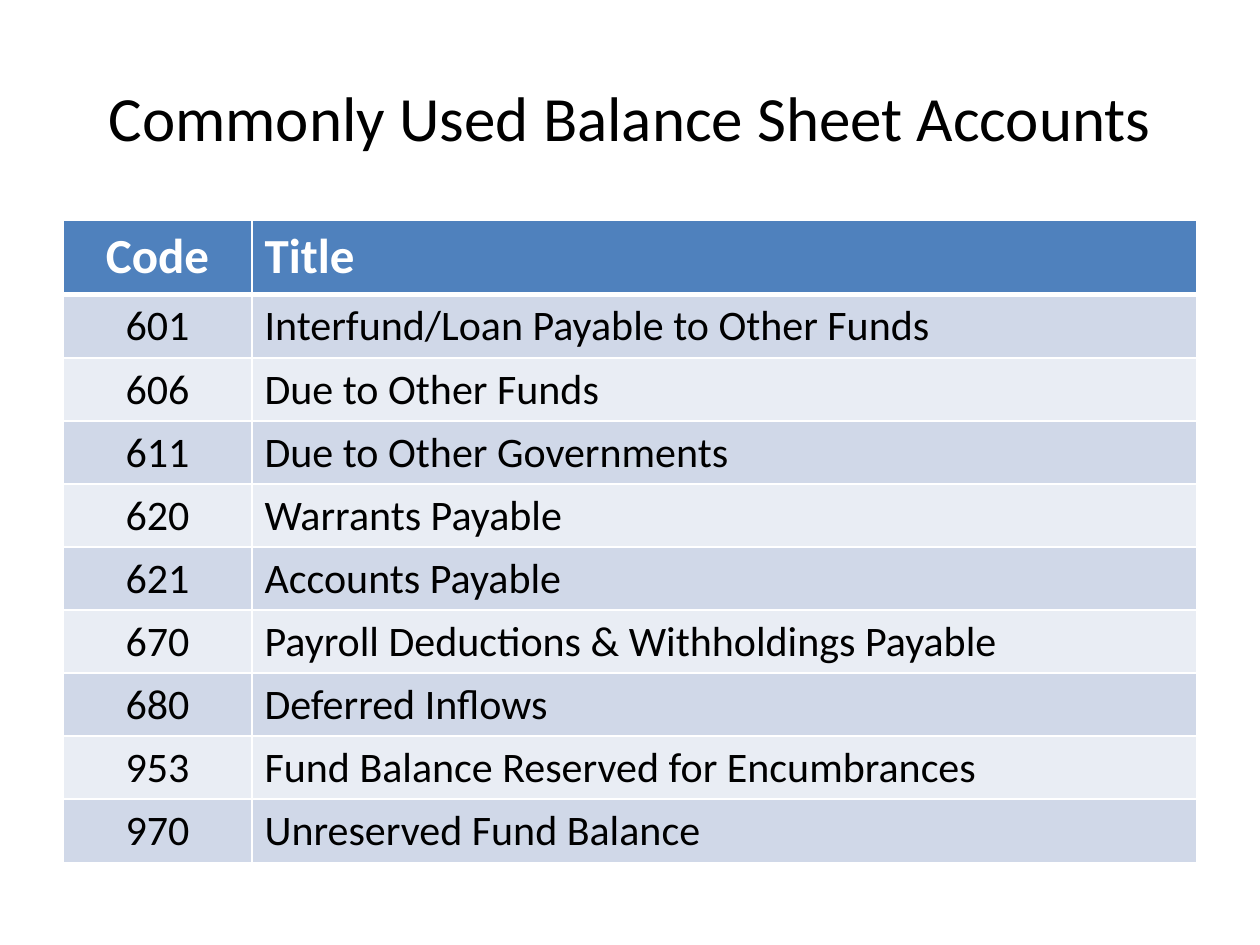
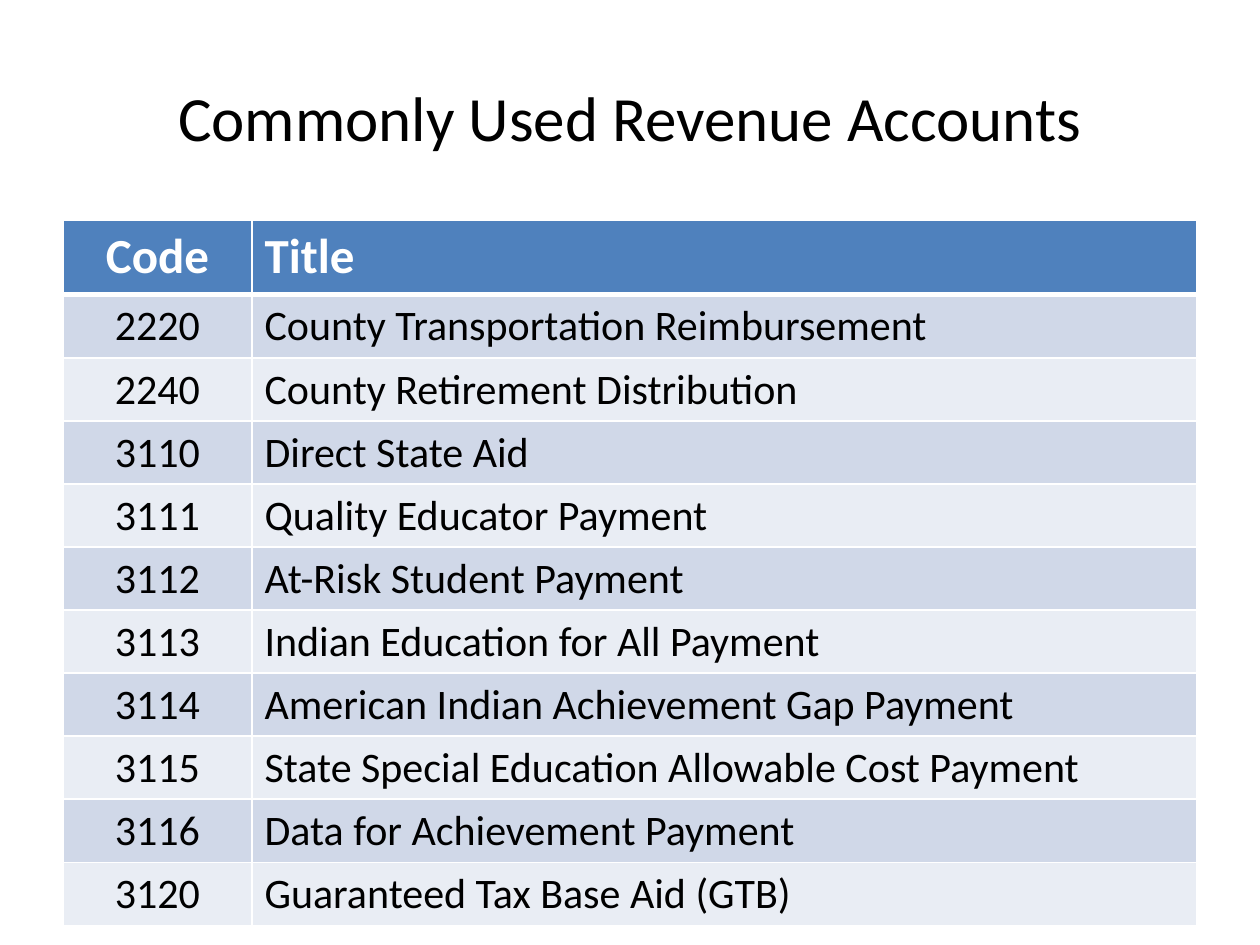
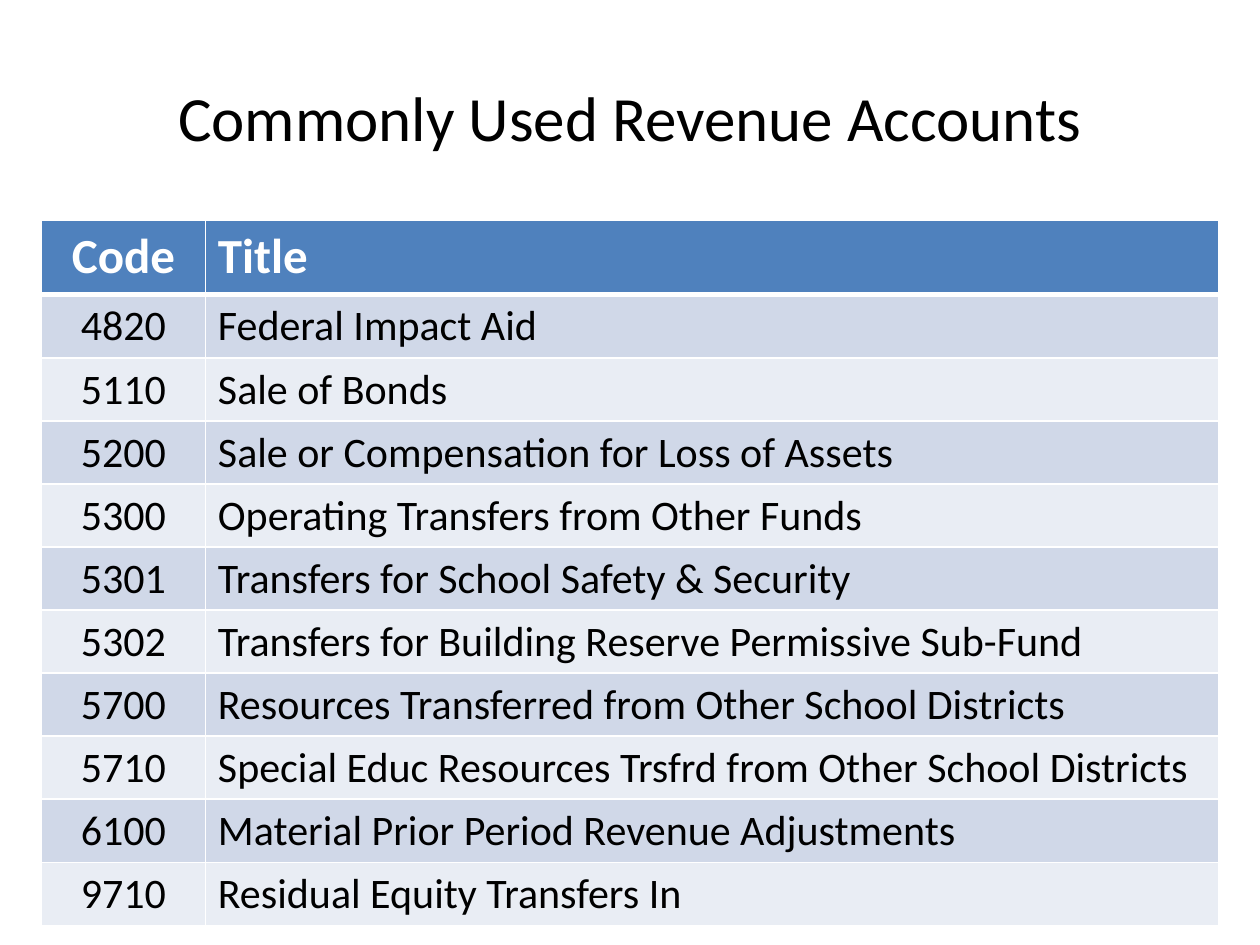
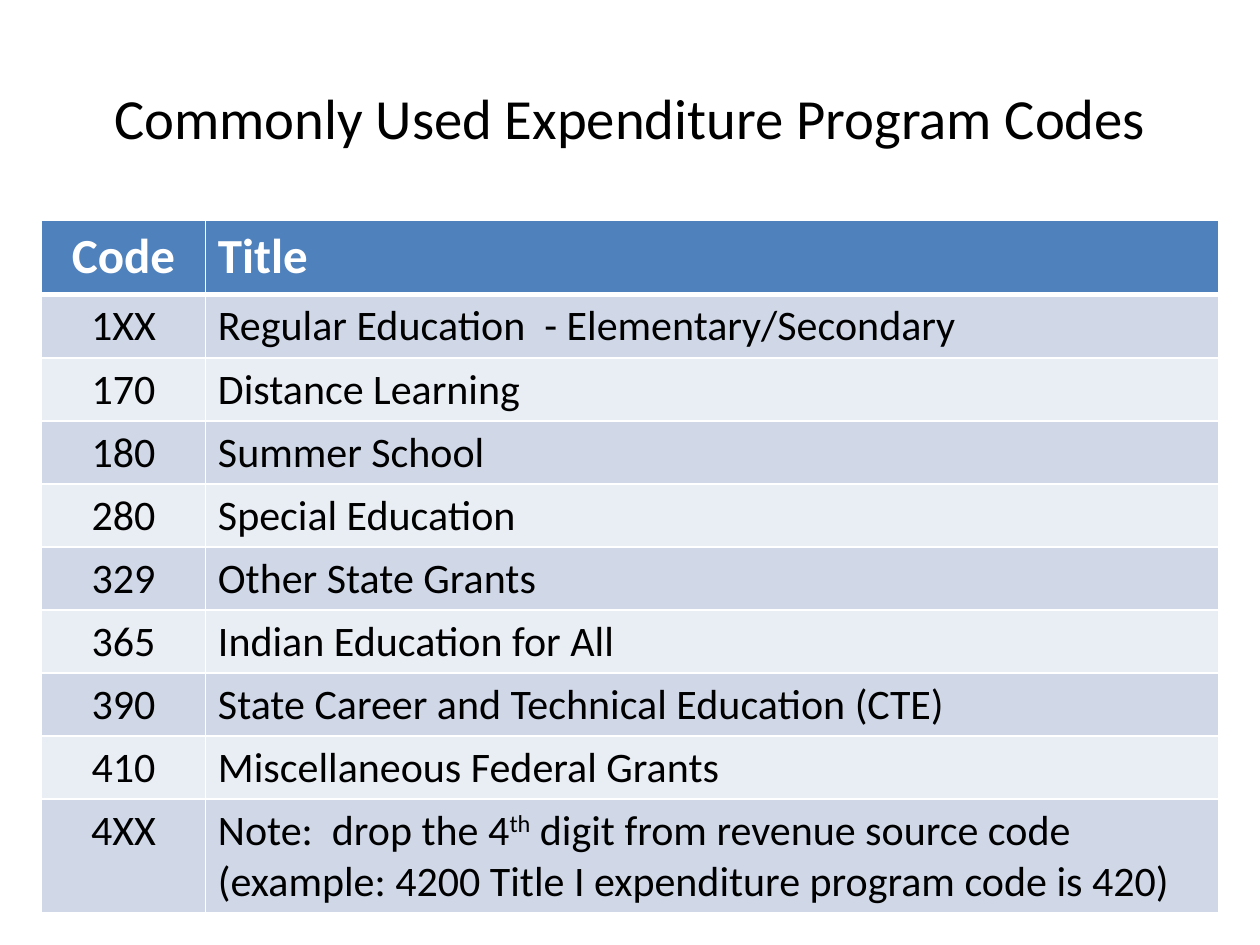
from dataclasses import dataclass

import lxml.etree
import pptx
import pptx.dml.color
import pptx.enum.text
import pptx.oxml.ns
import pptx.util

Inches = pptx.util.Inches
Pt = pptx.util.Pt
ALIGN = pptx.enum.text.PP_ALIGN


@dataclass(frozen=True)
class Theme:
    font: str = "Calibri"
    ink: str = "000000"
    white: str = "FFFFFF"
    header_fill: str = "4F81BD"
    bands: tuple[str, str] = ("D0D8E8", "E9EDF4")
    title_size: float = 36
    header_size: float = 28
    body_size: float = 24
    rule: float = 1
    header_rule: float = 3


@dataclass(frozen=True)
class Columns:
    left: float
    code: float
    title: float


@dataclass(frozen=True)
class AccountList:
    heading: str
    columns: Columns
    accounts: tuple[tuple[str, str], ...]
    heading_size: float
    last_row_height: float = 0.41
    extra_height: float = 0


THEME = Theme()
NARROW = Columns(0.5, 1.5, 7.5)
WIDE = Columns(0.33, 1.3, 8.04)
TABLE_TOP = 1.75
HEADER_HEIGHT = 0.59
ROW_HEIGHT = 0.41
ROW_PITCH = 0.5

ACCOUNT_LISTS = (
    AccountList(
        "Commonly Used Balance Sheet Accounts",
        NARROW,
        (
            ("601", "Interfund/Loan Payable to Other Funds"),
            ("606", "Due to Other Funds"),
            ("611", "Due to Other Governments"),
            ("620", "Warrants Payable"),
            ("621", "Accounts Payable"),
            ("670", "Payroll Deductions & Withholdings Payable"),
            ("680", "Deferred Inflows"),
            ("953", "Fund Balance Reserved for Encumbrances"),
            ("970", "Unreserved Fund Balance"),
        ),
        THEME.title_size,
    ),
    AccountList(
        "Commonly Used Revenue Accounts",
        NARROW,
        (
            ("2220", "County Transportation Reimbursement"),
            ("2240", "County Retirement Distribution"),
            ("3110", "Direct State Aid"),
            ("3111", "Quality Educator Payment"),
            ("3112", "At-Risk Student Payment"),
            ("3113", "Indian Education for All Payment"),
            ("3114", "American Indian Achievement Gap Payment"),
            ("3115", "State Special Education Allowable Cost Payment"),
            ("3116", "Data for Achievement Payment"),
            ("3120", "Guaranteed Tax Base Aid (GTB)"),
        ),
        THEME.title_size,
    ),
    AccountList(
        "Commonly Used Revenue Accounts",
        WIDE,
        (
            ("4820", "Federal Impact Aid"),
            ("5110", "Sale of Bonds"),
            ("5200", "Sale or Compensation for Loss of Assets"),
            ("5300", "Operating Transfers from Other Funds"),
            ("5301", "Transfers for School Safety & Security"),
            ("5302", "Transfers for Building Reserve Permissive Sub-Fund"),
            ("5700", "Resources Transferred from Other School Districts"),
            ("5710", "Special Educ Resources Trsfrd from Other School Districts"),
            ("6100", "Material Prior Period Revenue Adjustments"),
            ("9710", "Residual Equity Transfers In"),
        ),
        THEME.title_size,
    ),
    AccountList(
        "Commonly Used Expenditure Program Codes",
        WIDE,
        (
            ("1XX", "Regular Education  - Elementary/Secondary"),
            ("170", "Distance Learning"),
            ("180", "Summer School"),
            ("280", "Special Education"),
            ("329", "Other State Grants"),
            ("365", "Indian Education for All"),
            ("390", "State Career and Technical Education (CTE)"),
            ("410", "Miscellaneous Federal Grants"),
            (
                "4XX",
                "Note:  drop the 4^th^ digit from revenue source code "
                "(example: 4200 Title I expenditure program code is 420)",
            ),
        ),
        THEME.title_size * 0.9,
        last_row_height=0.81,
        extra_height=0.4,
    ),
)


def rgb(value: str) -> pptx.dml.color.RGBColor:
    return pptx.dml.color.RGBColor.from_string(value)


def write(paragraph, text: str, size: float, color: str, bold: bool = False) -> None:
    for index, part in enumerate(text.split("^")):
        run = paragraph.add_run()
        run.text = part
        run.font.name = THEME.font
        run.font.size = Pt(size)
        run.font.bold = bold
        run.font.color.rgb = rgb(color)
        if index % 2:
            run._r.get_or_add_rPr().set("baseline", "30000")


def add_border(cell, side: str, width: float) -> None:
    qn = pptx.oxml.ns.qn
    line = lxml.etree.SubElement(
        cell._tc.get_or_add_tcPr(), qn(f"a:ln{side}"), w=str(int(Pt(width)))
    )
    fill = lxml.etree.SubElement(line, qn("a:solidFill"))
    lxml.etree.SubElement(fill, qn("a:srgbClr"), val=THEME.white)


def fill_cell(cell, text: str, row: int, centred: bool) -> None:
    is_header = row == 0
    top = THEME.header_rule if row == 1 else THEME.rule
    bottom = THEME.header_rule if is_header else THEME.rule
    for side, width in zip("LRTB", (THEME.rule, THEME.rule, top, bottom)):
        add_border(cell, side, width)
    cell.fill.solid()
    band = THEME.bands[(row - 1) % 2]
    cell.fill.fore_color.rgb = rgb(THEME.header_fill if is_header else band)
    paragraph = cell.text_frame.paragraphs[0]
    paragraph.alignment = ALIGN.CENTER if centred else ALIGN.LEFT
    if is_header:
        write(paragraph, text, THEME.header_size, THEME.white, bold=True)
    else:
        write(paragraph, text, THEME.body_size, THEME.ink)


def add_heading(slide, account_list: AccountList) -> None:
    heading = slide.shapes.add_textbox(Inches(0.5), Inches(0.3), Inches(9), Inches(1.25))
    frame = heading.text_frame
    frame.word_wrap = True
    frame.vertical_anchor = pptx.enum.text.MSO_ANCHOR.MIDDLE
    frame.paragraphs[0].alignment = ALIGN.CENTER
    write(frame.paragraphs[0], account_list.heading, account_list.heading_size, THEME.ink)


def add_accounts(slide, account_list: AccountList) -> None:
    columns = account_list.columns
    entries = (("Code", "Title"), *account_list.accounts)
    height = (
        HEADER_HEIGHT + ROW_PITCH * len(account_list.accounts) + account_list.extra_height
    )
    frame = slide.shapes.add_table(
        len(entries), 2, Inches(columns.left), Inches(TABLE_TOP),
        Inches(columns.code + columns.title), Inches(height),
    )
    accounts = frame.table
    accounts.columns[0].width = Inches(columns.code)
    accounts.columns[1].width = Inches(columns.title)
    for row, entry in enumerate(entries):
        accounts.rows[row].height = Inches(ROW_HEIGHT if row else HEADER_HEIGHT)
        for column, text in enumerate(entry):
            fill_cell(accounts.cell(row, column), text, row, centred=column == 0)
    accounts.rows[len(entries) - 1].height = Inches(account_list.last_row_height)
    frame.height = Inches(height)


def main() -> None:
    deck = pptx.Presentation()
    deck.slide_width = Inches(10)
    deck.slide_height = Inches(7.5)
    for account_list in ACCOUNT_LISTS:
        slide = deck.slides.add_slide(deck.slide_layouts[6])
        add_heading(slide, account_list)
        add_accounts(slide, account_list)
    deck.save("out.pptx")


if __name__ == "__main__":
    main()
